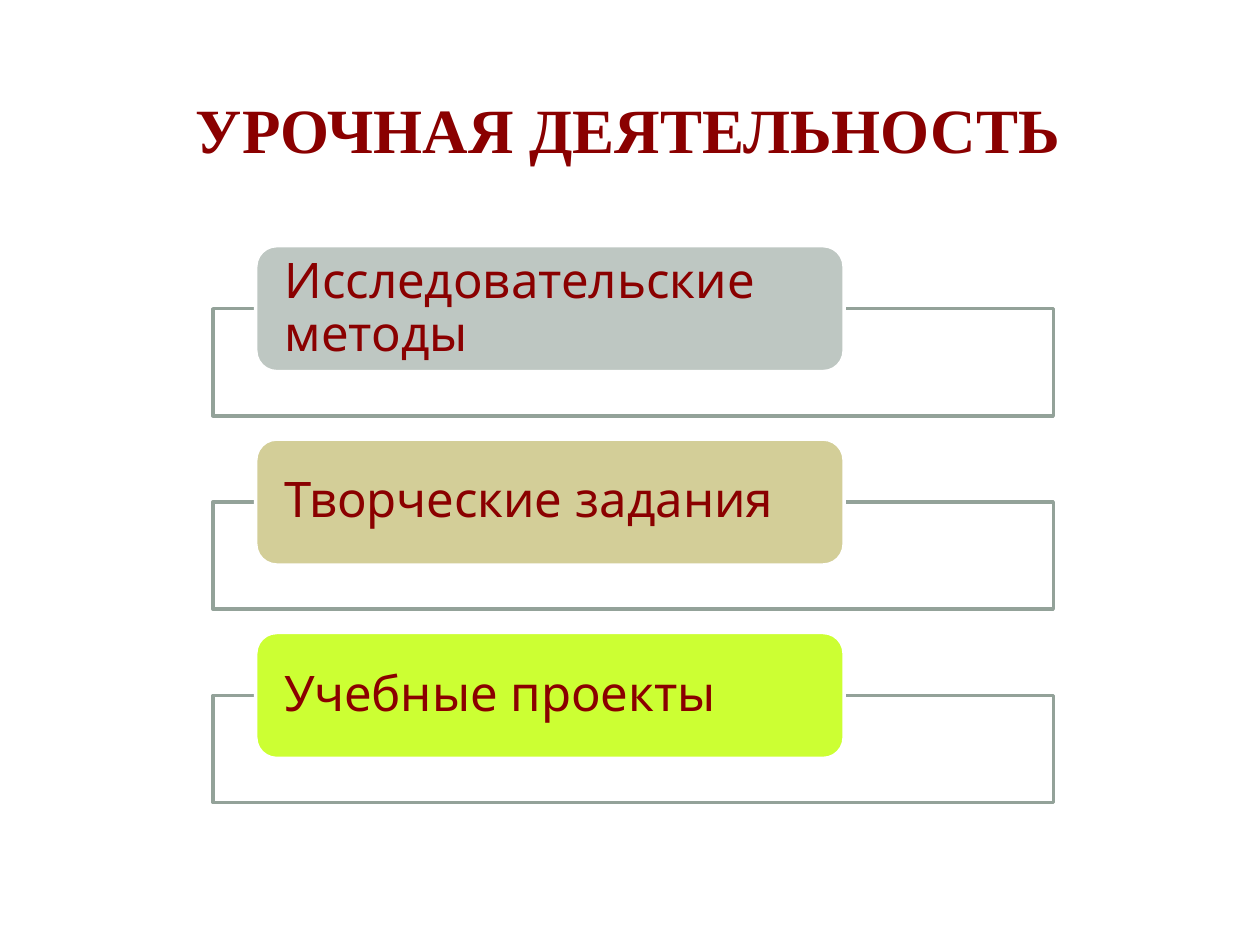
from dataclasses import dataclass

import pptx
import pptx.util
from pptx.dml.color import RGBColor
from pptx.enum.shapes import MSO_SHAPE
from pptx.enum.text import MSO_ANCHOR, PP_ALIGN
from pptx.util import Inches, Pt

WHITE = RGBColor(0xFF, 0xFF, 0xFF)
MAROON = RGBColor(0x8A, 0x00, 0x00)
SAGE = RGBColor(0x93, 0xA2, 0x99)
GREY = RGBColor(0xBE, 0xC7, 0xC2)
SAND = RGBColor(0xD3, 0xCE, 0x98)
LIME = RGBColor(0xCC, 0xFF, 0x33)

TOP = 1.95
STEP = 1.535


@dataclass
class Item:
    text: str
    fill: RGBColor


ITEMS = [
    Item("Исследовательские методы", GREY),
    Item("Творческие задания", SAND),
    Item("Учебные проекты", LIME),
]


def add_block(slide, kind, left: float, top: float, width: float,
              height: float, fill: RGBColor, line: RGBColor):
    block = slide.shapes.add_shape(
        kind, Inches(left), Inches(top), Inches(width), Inches(height))
    block.shadow.inherit = False
    block.fill.solid()
    block.fill.fore_color.rgb = fill
    block.line.color.rgb = line
    block.line.width = Pt(2)
    return block


def set_text(frame, text: str, font: str, size: int, align) -> None:
    frame.word_wrap = True
    frame.vertical_anchor = MSO_ANCHOR.MIDDLE
    para = frame.paragraphs[0]
    para.text = text
    para.alignment = align
    para.font.name = font
    para.font.size = Pt(size)
    para.font.color.rgb = MAROON


def add_title(slide, text: str) -> None:
    box = slide.shapes.add_textbox(
        Inches(0.47), Inches(0.45), Inches(9.03), Inches(1.14))
    set_text(box.text_frame, text, "Times New Roman", 36, PP_ALIGN.CENTER)
    box.text_frame.paragraphs[0].font.bold = True


def add_item(slide, item: Item, top: float) -> None:
    """Draw an outlined box with a rounded label over its top edge."""
    add_block(slide, MSO_SHAPE.RECTANGLE, 1.69, top + 0.5, 6.67, 0.85,
              WHITE, SAGE)
    label = add_block(slide, MSO_SHAPE.ROUNDED_RECTANGLE, 2.03, top, 4.67, 1,
                      item.fill, WHITE)
    frame = label.text_frame
    set_text(frame, item.text, "Quicksand", 28, PP_ALIGN.LEFT)
    frame.margin_left = frame.margin_right = Inches(0.18)
    frame.margin_top = frame.margin_bottom = 0
    frame.paragraphs[0].line_spacing = 0.9


def main() -> None:
    deck = pptx.Presentation()
    deck.slide_width = Inches(10)
    deck.slide_height = Inches(7.5)
    slide = deck.slides.add_slide(deck.slide_layouts[6])
    add_title(slide, "УРОЧНАЯ ДЕЯТЕЛЬНОСТЬ")
    for row, item in enumerate(ITEMS):
        add_item(slide, item, TOP + row * STEP)
    deck.save("out.pptx")


if __name__ == "__main__":
    main()
